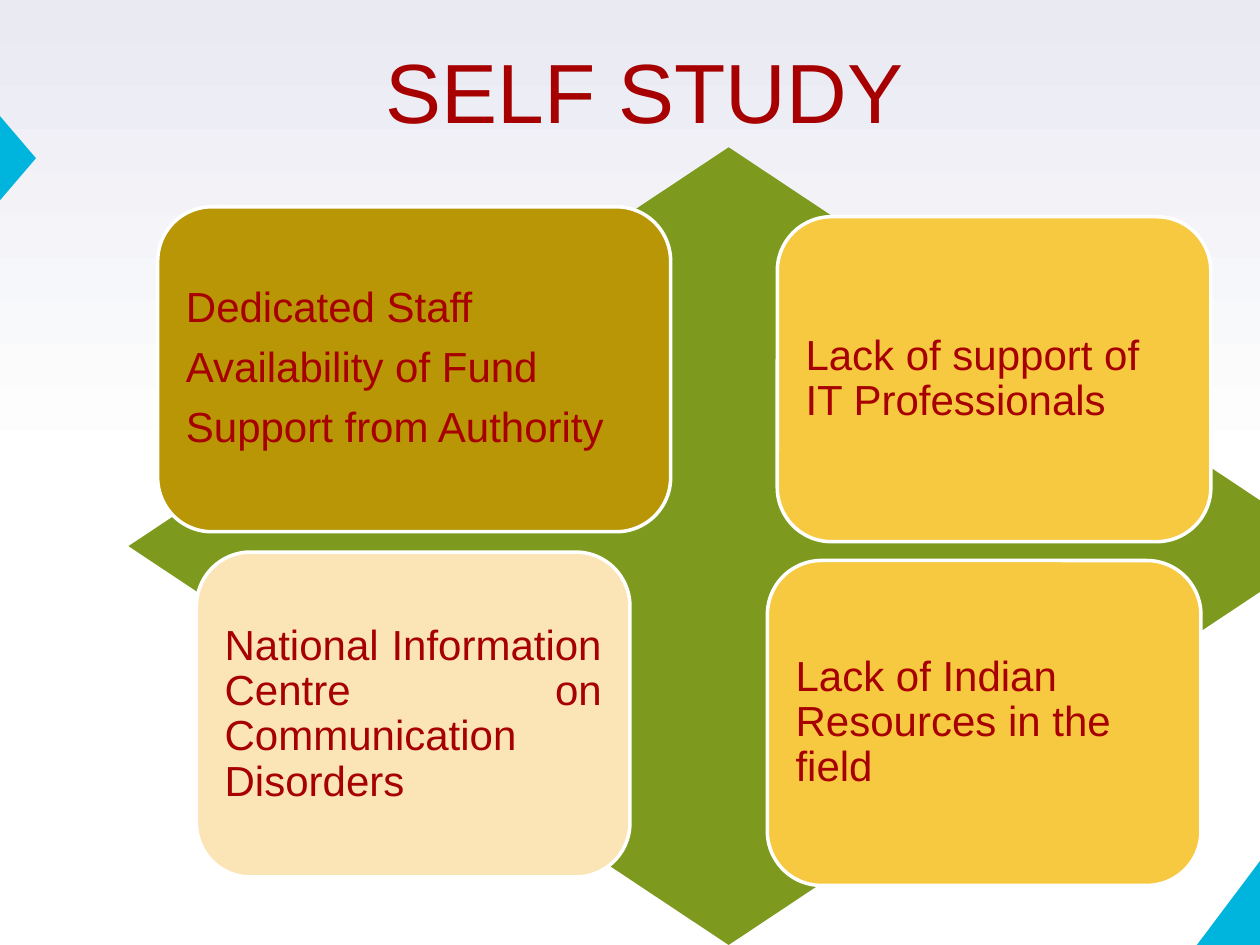
from dataclasses import dataclass

import pptx
import pptx.dml.color
import pptx.enum.shapes
import pptx.enum.text
import pptx.util

Cm = pptx.util.Cm
Pt = pptx.util.Pt
Shape = pptx.enum.shapes.MSO_SHAPE
Align = pptx.enum.text.PP_ALIGN
Anchor = pptx.enum.text.MSO_ANCHOR

TEXT_RED = "A60000"
CYAN = "00B5DD"
GREEN = "7D9A1E"
YELLOW = "F7C940"
CARD_HEIGHT = 6.55


@dataclass
class Card:
    left: float
    top: float
    fill: str
    lines: list[str]
    width: float = 8.74
    align: Align = Align.LEFT


CARDS = [
    Card(3.18, 4.17, "B89605",
         ["Dedicated Staff", "Availability of Fund", "Support from Authority"], width=10.34),
    Card(15.67, 4.37, YELLOW, ["Lack of support of IT Professionals"]),
    Card(3.96, 11.13, "FBE5B6",
         ["National Information Centre on Communication Disorders"], align=Align.JUSTIFY),
    Card(15.47, 11.3, YELLOW, ["Lack of Indian Resources in the field"]),
]


def color(value: str) -> pptx.dml.color.RGBColor:
    return pptx.dml.color.RGBColor.from_string(value)


def apply(target, values: dict) -> None:
    for name, value in values.items():
        setattr(target, name, value)


def paint_background(page) -> None:
    fill = page.background.fill
    fill.gradient()
    fill.gradient_angle = 90
    for stop, position, value in zip(fill.gradient_stops, (0.5, 1), ("FFFFFF", "E9EAF2")):
        stop.position = position
        stop.color.rgb = color(value)


def add_filled(page, kind: Shape, left: float, top: float, width: float, height: float, fill: str):
    shape = page.shapes.add_shape(kind, Cm(left), Cm(top), Cm(width), Cm(height))
    shape.shadow.inherit = False
    shape.fill.solid()
    shape.fill.fore_color.rgb = color(fill)
    shape.line.fill.background()
    return shape


def write(box, lines: list[str], size: float, margin: float, anchor: Anchor, layout: dict) -> None:
    frame = box.text_frame
    inset = Cm(margin)
    apply(frame, {"word_wrap": True, "vertical_anchor": anchor, "margin_left": inset,
                  "margin_top": inset, "margin_right": inset, "margin_bottom": inset})
    for index, line in enumerate(lines):
        para = frame.add_paragraph() if index else frame.paragraphs[0]
        apply(para, layout)
        span = para.add_run()
        span.text = line
        apply(span.font, {"name": "Arial", "size": Pt(size)})
        span.font.color.rgb = color(TEXT_RED)


def add_card(page, card: Card) -> None:
    box = add_filled(page, Shape.ROUNDED_RECTANGLE, card.left, card.top,
                     card.width, CARD_HEIGHT, card.fill)
    box.line.color.rgb = color("FFFFFF")
    box.line.width = Pt(2)
    write(box, card.lines, 24, 0.25, Anchor.MIDDLE,
          {"alignment": card.align, "line_spacing": 0.9, "space_after": Pt(8.4)})


def main() -> None:
    deck = pptx.Presentation()
    apply(deck, {"slide_width": Cm(25.4), "slide_height": Cm(19.05)})
    page = deck.slides.add_slide(deck.slide_layouts[6])
    paint_background(page)

    corner = add_filled(page, Shape.RIGHT_TRIANGLE, 24.13, 17.32, 1.3, 1.73, CYAN)
    corner._element.spPr.xfrm.set("flipH", "1")
    pointer = add_filled(page, Shape.ISOSCELES_TRIANGLE, -0.51, 2.82, 1.73, 0.74, CYAN)
    pointer.rotation = 90

    title = page.shapes.add_textbox(Cm(5.16), Cm(1.19), Cm(15.67), Cm(4.01))
    write(title, ["SELF STUDY"], 48, 0, Anchor.TOP,
          {"alignment": Align.CENTER, "line_spacing": 0.8})

    add_filled(page, Shape.DIAMOND, 2.59, 2.97, 24.2, 16.08, GREEN)
    for card in CARDS:
        add_card(page, card)

    deck.save("out.pptx")


if __name__ == "__main__":
    main()
